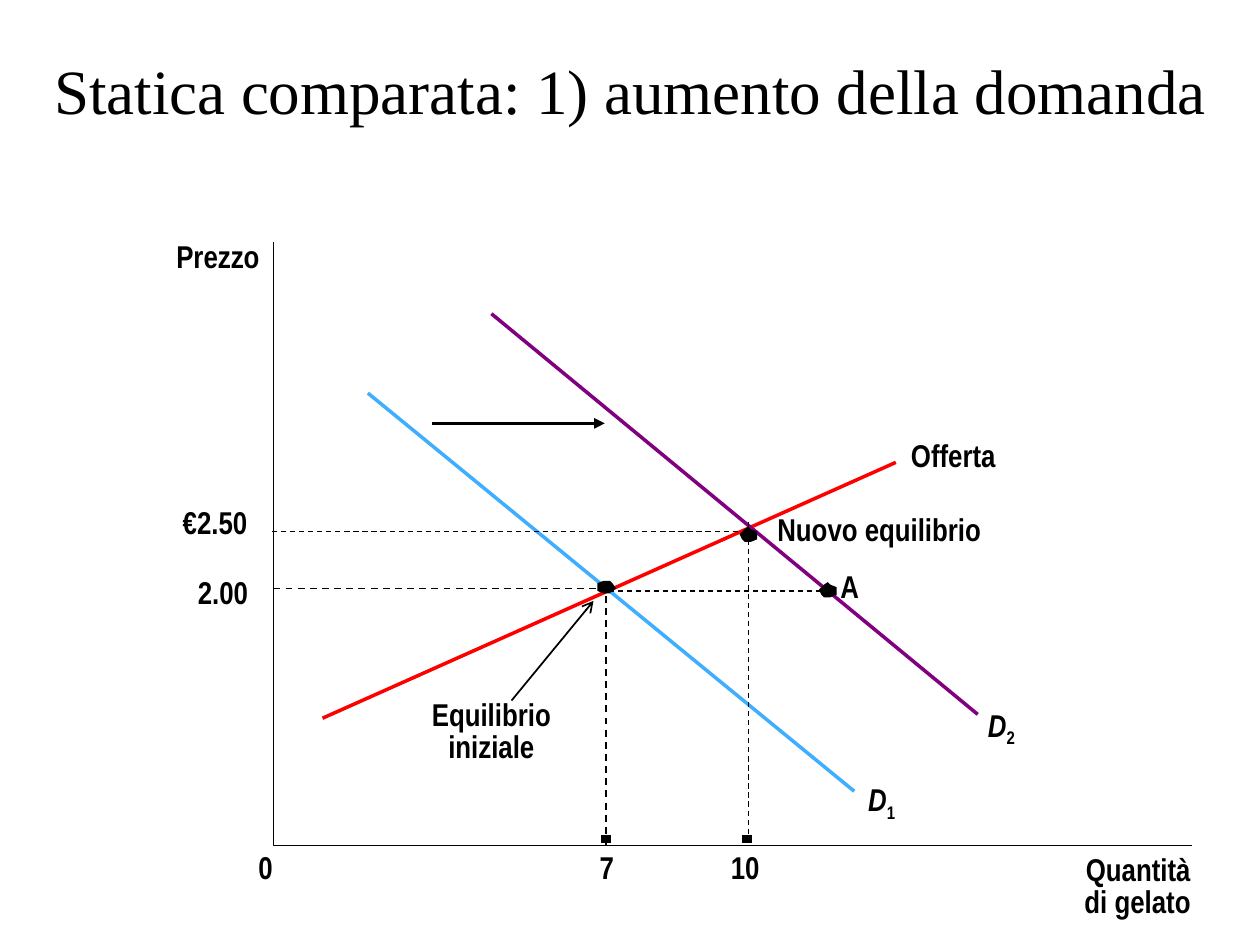
from lxml.etree import SubElement
from pptx import Presentation
from pptx.dml.color import RGBColor
from pptx.enum.dml import MSO_LINE
from pptx.enum.shapes import MSO_CONNECTOR
from pptx.enum.text import MSO_ANCHOR, MSO_AUTO_SIZE, PP_ALIGN
from pptx.oxml.ns import qn
from pptx.util import Inches, Pt

BLACK = "000000"
LEFT, CENTER, RIGHT = PP_ALIGN.LEFT, PP_ALIGN.CENTER, PP_ALIGN.RIGHT

# Marker outlines as offsets in inches from the marker's left top corner
OVAL = [(0.07, 0.1), (0.1, 0.1), (0.12, 0.08), (0.15, 0.06), (0.12, 0.02), (0.1, 0),
        (0.05, 0), (0, 0.02), (0, 0.08), (0.05, 0.1)]
PENTAGON = [(0.07, 0.12), (0.09, 0.12), (0.14, 0.1), (0.14, 0.04), (0.09, 0.02), (0.07, 0),
            (0.04, 0.02), (0, 0.06), (0.02, 0.1), (0.04, 0.12)]


def color(hex_string):
    return RGBColor.from_string(hex_string)


def style_line(line, line_color, width, dashed):
    line.color.rgb = color(line_color)
    line.width = Pt(width)
    if dashed:
        line.dash_style = MSO_LINE.DASH


def add_line(slide, start, end, line_color=BLACK, width=1, dashed=False, arrow=None):
    """Draw a straight line, with an optional arrowhead of the given type at its end."""
    points = [Inches(value) for value in (*start, *end)]
    connector = slide.shapes.add_connector(MSO_CONNECTOR.STRAIGHT, *points)
    style_line(connector.line, line_color, width, dashed)
    SubElement(connector.element.spPr, qn("a:effectLst"))
    if arrow:
        SubElement(connector.line._get_or_add_ln(), qn("a:tailEnd"), type=arrow)


def add_outline(slide, points, closed):
    corners = [(Inches(x), Inches(y)) for x, y in points]
    builder = slide.shapes.build_freeform(*corners[0])
    builder.add_line_segments(corners[1:], close=closed)
    shape = builder.convert_to_shape()
    shape.shadow.inherit = False
    return shape


def add_bent_line(slide, points, dashed=False):
    shape = add_outline(slide, points, closed=False)
    shape.fill.background()
    style_line(shape.line, BLACK, 1, dashed)


def add_marker(slide, left, top, outline):
    shape = add_outline(slide, [(left + x, top + y) for x, y in outline], closed=True)
    shape.fill.solid()
    shape.fill.fore_color.rgb = color(BLACK)
    shape.line.fill.background()


def format_span(span, name, size, bold=False):
    span.font.name = name
    span.font.size = Pt(size)
    span.font.bold = bold
    span.font.color.rgb = color(BLACK)


def add_title(slide, text):
    box = slide.shapes.add_textbox(Inches(0.17), Inches(0.25), Inches(9.67), Inches(0.92))
    frame = box.text_frame
    frame.text = text
    frame.word_wrap = True
    frame.vertical_anchor = MSO_ANCHOR.MIDDLE
    para = frame.paragraphs[0]
    para.alignment = CENTER
    format_span(para.runs[0], "Times New Roman", 36)


def add_label(slide, text, left, top, width, height=0.3, align=LEFT, spacing=None):
    box = slide.shapes.add_textbox(Inches(left), Inches(top), Inches(width), Inches(height))
    frame = box.text_frame
    frame.text = text
    frame.word_wrap = False
    frame.auto_size = MSO_AUTO_SIZE.SHAPE_TO_FIT_TEXT
    frame.margin_left = frame.margin_right = frame.margin_top = frame.margin_bottom = 0
    for para in frame.paragraphs:
        para.alignment = align
        if spacing:
            para.line_spacing = spacing
        for span in para.runs:
            format_span(span, "Arial Narrow", 18, bold=True)
    return box


def add_curve_label(slide, letter, index, left, top):
    """Label a curve with an italic letter and a subscript index."""
    para = add_label(slide, letter, left, top, 0.25).text_frame.paragraphs[0]
    para.runs[0].font.italic = True
    span = para.add_run()
    span.text = index
    format_span(span, "Arial Narrow", 18, bold=True)
    span.font._element.set("baseline", "-25000")


def main():
    deck = Presentation()
    deck.slide_width, deck.slide_height = Inches(10), Inches(7.5)
    slide = deck.slides.add_slide(deck.slide_layouts[6])
    add_title(slide, "Statica comparata: 1) aumento della domanda")

    # Quantity ticks and initial equilibrium guide
    for x in (4.81, 5.93):
        add_line(slide, (x, 6.63), (x, 6.69), width=6)
    add_bent_line(slide, [(2.17, 4.67), (4.81, 4.67), (4.81, 6.73)], dashed=True)

    # Supply, first demand and second demand
    add_line(slide, (7.11, 3.67), (2.56, 5.7), "FF0000", 2)
    add_line(slide, (2.92, 3.12), (6.78, 6.28), "40AEFF", 2)
    add_line(slide, (3.9, 2.49), (7.76, 5.67), "800080", 2)

    add_marker(slide, 4.74, 4.61, OVAL)
    add_marker(slide, 5.87, 4.18, PENTAGON)
    add_bent_line(slide, [(2.17, 1.92), (2.17, 6.71), (9.46, 6.71)])

    # Demand shift and pointer to the initial equilibrium
    add_line(slide, (3.43, 3.36), (4.8, 3.36), width=2, arrow="triangle")
    add_line(slide, (4.06, 5.56), (4.71, 4.77), arrow="arrow")

    # Guides through point A and the new equilibrium
    add_line(slide, (6.59, 4.69), (4.84, 4.69), width=0.75, dashed=True)
    add_marker(slide, 6.5, 4.62, PENTAGON)
    add_line(slide, (2.16, 4.22), (5.87, 4.22), width=0.75, dashed=True)
    add_line(slide, (5.94, 4.14), (5.94, 6.66), width=0.75, dashed=True)

    # Widths leave a little room so that no label breaks
    for text, left, top, width in [
        ("€2.50", 1.45, 3.99, 0.55),
        ("2.00", 1.57, 4.55, 0.43),
        ("0", 2.05, 6.73, 0.14),
        ("7", 4.76, 6.73, 0.14),
        ("10", 5.8, 6.73, 0.26),
        ("Offerta", 7.23, 3.46, 0.72),
        ("Nuovo equilibrio", 6.17, 4.05, 1.66),
        ("A", 6.67, 4.5, 0.18),
    ]:
        add_label(slide, text, left, top, width)
    add_label(slide, "Prezzo", 1.35, 1.93, 0.71, 0.26, RIGHT, 0.85)
    add_label(slide, "Quantità\ndi gelato", 8.55, 6.79, 0.9, 0.51, RIGHT, 0.85)
    add_label(slide, "Equilibrio\niniziale", 3.4, 5.56, 1, 0.51, CENTER, 0.85)
    add_curve_label(slide, "D", "1", 6.89, 6.19)
    add_curve_label(slide, "D", "2", 7.84, 5.6)

    deck.save("out.pptx")


if __name__ == "__main__":
    main()
